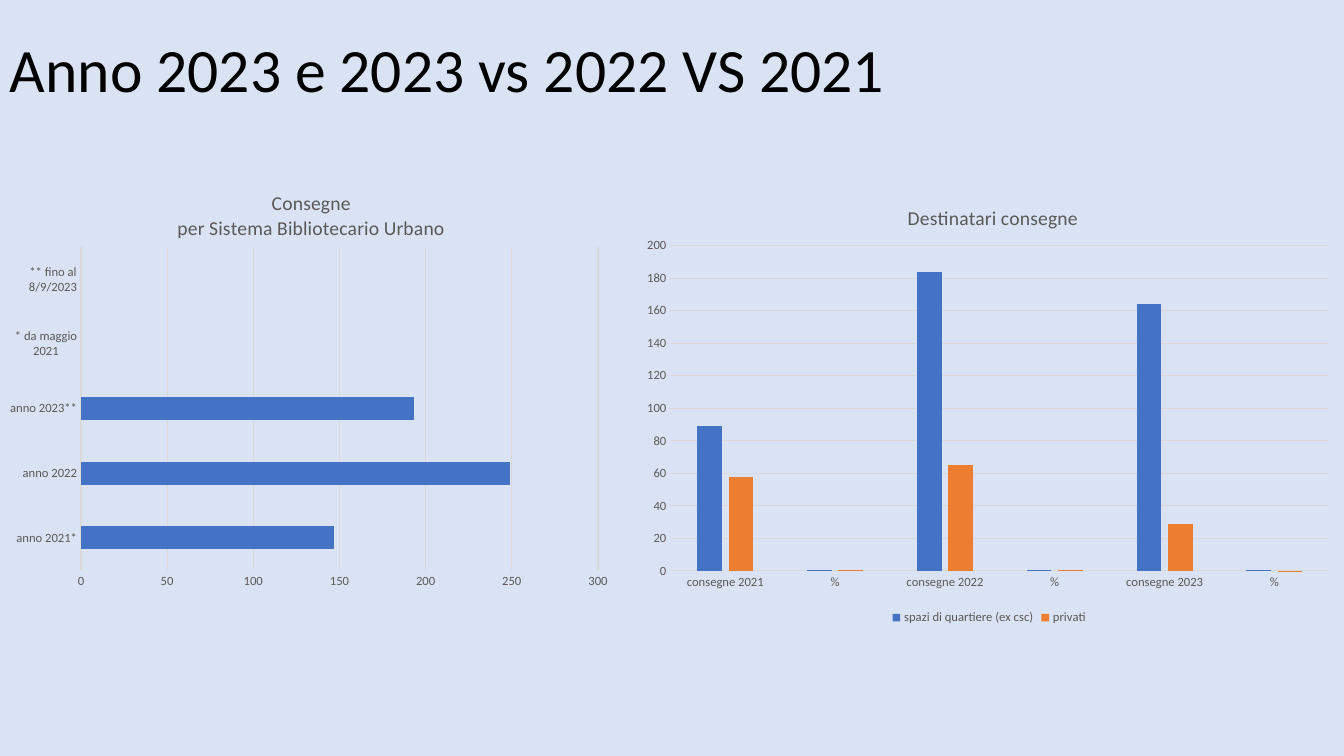
import pptx
import pptx.chart.data
import pptx.dml.color
import pptx.enum.chart
import pptx.enum.text
import pptx.oxml
import pptx.oxml.ns
import pptx.util
from pptx.util import Cm, Pt

FONT = "Calibri"
GREY, GRID, BLUE, ORANGE = "595959", "D9D9D9", "4472C4", "ED7D31"
XL = pptx.enum.chart


def rgb(value):
    return pptx.dml.color.RGBColor.from_string(value)


def layout(**fractions):
    """Manual chart layout, in fractions of the chart frame."""
    target = '<c:layoutTarget val="inner"/>' if "w" in fractions else ""
    modes = '<c:xMode val="edge"/><c:yMode val="edge"/>'
    sizes = "".join(f'<c:{k} val="{v}"/>' for k, v in fractions.items())
    return pptx.oxml.parse_xml(
        f'<c:layout {pptx.oxml.ns.nsdecls("c")}><c:manualLayout>'
        f"{target}{modes}{sizes}</c:manualLayout></c:layout>")


prs = pptx.Presentation()
prs.slide_width, prs.slide_height = Cm(33.87), Cm(19.05)
s = prs.slides.add_slide(prs.slide_layouts[6])
s.background.fill.solid()
s.background.fill.fore_color.rgb = rgb("DAE3F3")

# Heading
tf = s.shapes.add_textbox(0, 0, Cm(29.21), Cm(3.68)).text_frame
tf.word_wrap = True
tf.vertical_anchor = pptx.enum.text.MSO_ANCHOR.MIDDLE
p = tf.paragraphs[0]
p.line_spacing = 0.9
r = p.add_run()
r.text = "Anno 2023 e 2023 vs 2022 VS 2021"
r.font.size, r.font.name = Pt(44), FONT
r.font.color.rgb = rgb("000000")

# Chart contents
deliveries = dict(
    kind=XL.XL_CHART_TYPE.BAR_CLUSTERED,
    box=(0, 4.17, 15.7, 10.85),
    title=["Consegne", "per Sistema Bibliotecario Urbano"],
    categories=["anno 2021*", "anno 2022", "anno 2023**",
                "* da maggio 2021", "** fino al 8/9/2023"],
    series=[("Consegne\nper Sistema Bibliotecario Urbano",
             [147, 249, 193, None, None], BLUE)],
    gap=182, overlap=0, top=300, step=50, legend=False,
    title_at=dict(x=0.28, y=0.05),
    plot_at=dict(x=0.13, y=0.19, w=0.83, h=0.75))
recipients = dict(
    kind=XL.XL_CHART_TYPE.COLUMN_CLUSTERED,
    box=(16, 4.62, 17.86, 11.23),
    title=["Destinatari consegne"],
    categories=["consegne 2021", "%", "consegne 2022", "%",
                "consegne 2023", "%"],
    series=[("spazi di quartiere (ex csc)",
             [89, 0.6, 184, 0.7, 164, 0.8], BLUE),
            ("privati", [58, 0.4, 65, 0.3, 29, 0.2], ORANGE)],
    gap=219, overlap=-27, top=200, step=20, legend=True,
    title_at=dict(x=0.38, y=0.04),
    plot_at=dict(x=0.05, y=0.14, w=0.93, h=0.73))

for c in (deliveries, recipients):
    data = pptx.chart.data.CategoryChartData()
    data.categories = c["categories"]
    for name, values, color in c["series"]:
        data.add_series(name, values)
    box = [Cm(v) for v in c["box"]]
    chart = s.shapes.add_chart(c["kind"], *box, data).chart
    chart.font.size, chart.font.name = Pt(10), FONT

    # Chart title
    tf = chart.chart_title.text_frame
    for i, line in enumerate(c["title"]):
        p = tf.add_paragraph() if i else tf.paragraphs[0]
        r = p.add_run()
        r.text = line
        r.font.size, r.font.name, r.font.bold = Pt(14), FONT, False
        r.font.color.rgb = rgb(GREY)
    chart.chart_title.include_in_layout = False

    # Bars
    plot = chart.plots[0]
    plot.gap_width, plot.overlap = c["gap"], c["overlap"]
    plot.vary_by_categories = False
    for series, (name, values, color) in zip(plot.series, c["series"]):
        series.format.fill.solid()
        series.format.fill.fore_color.rgb = rgb(color)

    # Axes
    cat, val = chart.category_axis, chart.value_axis
    for axis in (cat, val):
        axis.major_tick_mark = axis.minor_tick_mark = XL.XL_TICK_MARK.NONE
        font = axis.tick_labels.font
        font.size, font.name = Pt(9), FONT
        font.color.rgb = rgb(GREY)
    val.has_major_gridlines = True
    for line in (cat.format.line, val.major_gridlines.format.line):
        line.color.rgb = rgb(GRID)
        line.width = Pt(0.75)
    val.format.line.fill.background()
    val.minimum_scale, val.maximum_scale = 0, c["top"]
    val.major_unit = c["step"]
    val.tick_labels.number_format = "0"
    val.tick_labels.number_format_is_linked = False

    # Legend
    chart.has_legend = c["legend"]
    if c["legend"]:
        chart.legend.position = XL.XL_LEGEND_POSITION.BOTTOM
        chart.legend.include_in_layout = False
        font = chart.legend.font
        font.size, font.name = Pt(9), FONT
        font.color.rgb = rgb(GREY)

    # Title and plot placement
    ns = pptx.oxml.ns.qn
    title = chart.element.find(".//" + ns("c:title"))
    area = chart.element.find(".//" + ns("c:plotArea"))
    for parent in (title, area):
        for old in parent.findall(ns("c:layout")):
            parent.remove(old)
    title.find(ns("c:tx")).addnext(layout(**c["title_at"]))
    area.insert(0, layout(**c["plot_at"]))

prs.save("out.pptx")
